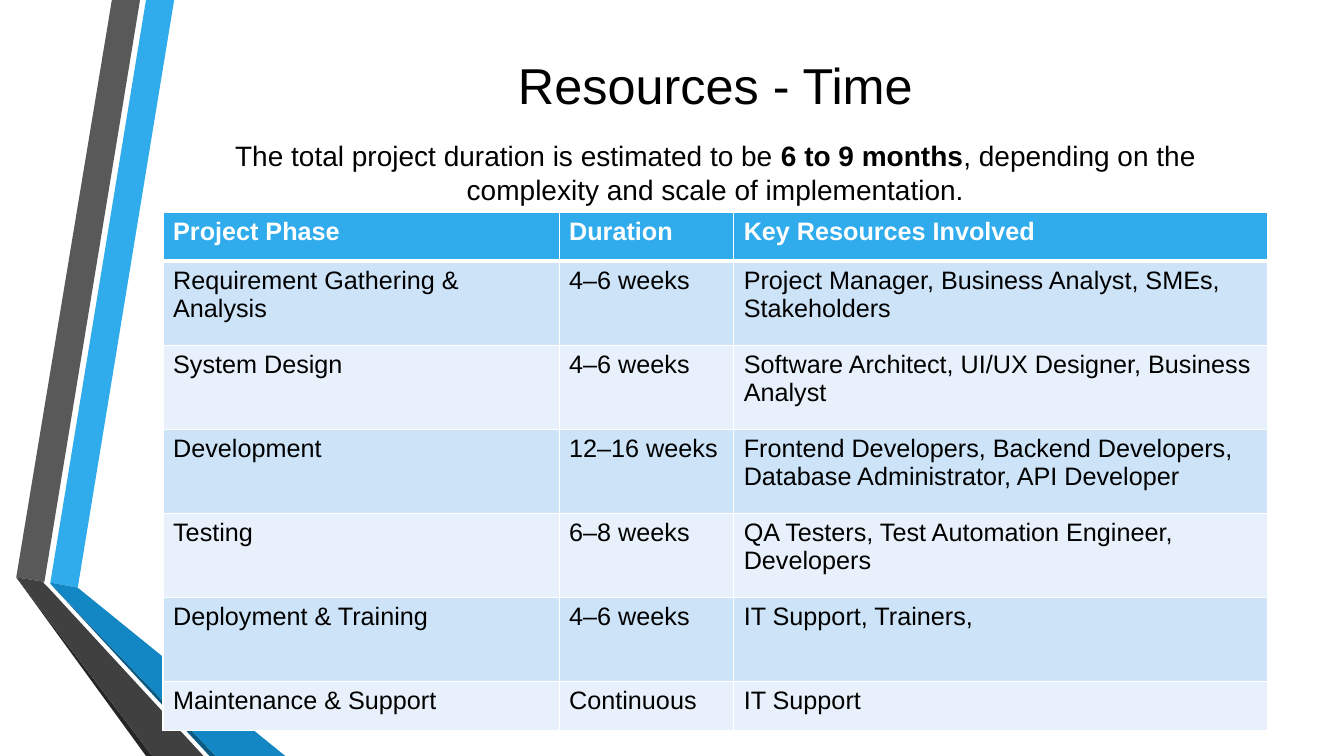
from lxml import etree
from pptx import Presentation
from pptx.dml.color import RGBColor
from pptx.enum import text
from pptx.oxml.ns import qn
from pptx.util import Cm, Pt

BLACK = RGBColor(0, 0, 0)
WHITE = RGBColor(0xFF, 0xFF, 0xFF)
BLUE = RGBColor(0x30, 0xAC, 0xEC)
MID_BLUE = RGBColor(0x12, 0x87, 0xC3)
DEEP_BLUE = RGBColor(0x0C, 0x5A, 0x82)
GREY = RGBColor(0x59, 0x59, 0x59)
DARK_GREY = RGBColor(0x40, 0x40, 0x40)
DEEP_GREY = RGBColor(0x26, 0x26, 0x26)
BAND_DARK = RGBColor(0xCD, 0xE3, 0xF8)
BAND_LIGHT = RGBColor(0xE8, 0xF1, 0xFB)

WIDTH, HEIGHT = 33.87, 19.05
LEFT, CONTENT_WIDTH = 4.11, 27.84

RIBBONS = [
    (BLUE, [(1.27, 14.68), (1.96, 14.81), (4.39, 0), (3.68, 0)]),
    (GREY, [(3.53, 0), (2.82, 0), (0.41, 14.55), (1.12, 14.66)]),
    (DEEP_GREY, [(0.41, 14.55), (3.68, HEIGHT), (3.84, HEIGHT)]),
    (DEEP_BLUE, [(1.27, 14.71), (5.28, HEIGHT), (5.44, HEIGHT)]),
    (MID_BLUE, [(1.27, 14.71), (5.44, HEIGHT), (7.19, HEIGHT),
                (1.96, 14.81), (1.27, 14.68)]),
    (DARK_GREY, [(5.13, HEIGHT), (1.22, 14.81), (1.09, 14.68), (1.12, 14.66),
                 (0.41, 14.55), (3.84, HEIGHT)]),
]

COLUMNS = [9.98, 4.4, 13.46]
ROW_HEIGHTS = [1.22] + [2.12] * 5 + [1.22]
PHASES = [
    ("Project Phase", "Duration", "Key Resources Involved"),
    ("Requirement Gathering & Analysis", "4–6 weeks",
     "Project Manager, Business Analyst, SMEs, Stakeholders"),
    ("System Design", "4–6 weeks",
     "Software Architect, UI/UX Designer, Business Analyst"),
    ("Development", "12–16 weeks",
     "Frontend Developers, Backend Developers, Database Administrator, API Developer"),
    ("Testing", "6–8 weeks", "QA Testers, Test Automation Engineer, Developers"),
    ("Deployment & Training", "4–6 weeks", "IT Support, Trainers,"),
    ("Maintenance & Support", "Continuous", "IT Support"),
]
INTRO = [
    ("The total project duration is estimated to be ", False),
    ("6 to 9 months", True),
    (", depending on the complexity and scale of implementation.", False),
]


def set_font(p, size, color, bold=False):
    p.font.name = "Arial"
    p.font.size = Pt(size)
    p.font.bold = bold
    p.font.color.rgb = color


def add_ribbons(s, left, top):
    for color, points in RIBBONS:
        corners = [(Cm(left + x), Cm(top + y)) for x, y in points]
        builder = s.shapes.build_freeform(*corners[0])
        builder.add_line_segments(corners[1:], close=True)
        sp = builder.convert_to_shape()
        sp.shadow.inherit = False
        sp.fill.solid()
        sp.fill.fore_color.rgb = color
        sp.line.fill.background()


def set_title(s, left, top, width, height):
    sp = s.shapes.title
    sp.left, sp.top, sp.width, sp.height = map(Cm, (left, top, width, height))
    tf = sp.text_frame
    tf.text = "Resources - Time"
    tf.vertical_anchor = text.MSO_ANCHOR.MIDDLE
    p = tf.paragraphs[0]
    p.alignment = text.PP_ALIGN.CENTER
    set_font(p, 36, BLACK)


def set_borders(cell, top, bottom):
    """Draw white cell borders; top and bottom are widths in points."""
    tc_pr = cell._tc.get_or_add_tcPr()
    widths = {"lnL": 1, "lnR": 1, "lnT": top, "lnB": bottom}
    for i, (tag, width) in enumerate(widths.items()):
        ln = etree.Element(qn(f"a:{tag}"), w=str(Pt(width)))
        fill = etree.SubElement(ln, qn("a:solidFill"))
        etree.SubElement(fill, qn("a:srgbClr"), val=str(WHITE))
        tc_pr.insert(i, ln)


def add_phase_table(s, left, top, width, height):
    table = s.shapes.add_table(len(PHASES), len(COLUMNS), Cm(left), Cm(top),
                               Cm(width), Cm(height)).table
    for column, column_width in zip(table.columns, COLUMNS):
        column.width = Cm(column_width)
    for i, (row, row_height, values) in enumerate(zip(table.rows, ROW_HEIGHTS, PHASES)):
        row.height = Cm(row_height)
        header = i == 0
        band = BLUE if header else BAND_DARK if i % 2 else BAND_LIGHT
        for cell, value in zip(row.cells, values):
            cell.text = value
            cell.fill.solid()
            cell.fill.fore_color.rgb = band
            set_font(cell.text_frame.paragraphs[0], 18,
                     WHITE if header else BLACK, header)
            set_borders(cell, 3 if i == 1 else 1, 3 if header else 1)


def add_intro(s, left, top, width, height):
    tf = s.shapes.add_textbox(Cm(left), Cm(top), Cm(width), Cm(height)).text_frame
    tf.word_wrap = True
    tf.vertical_anchor = text.MSO_ANCHOR.MIDDLE
    p = tf.paragraphs[0]
    p.alignment = text.PP_ALIGN.CENTER
    set_font(p, 20, BLACK)
    for words, bold in INTRO:
        r = p.add_run()
        r.text = words
        r.font.bold = bold


def main():
    prs = Presentation()
    prs.slide_width, prs.slide_height = Cm(WIDTH), Cm(HEIGHT)
    s = prs.slides.add_slide(prs.slide_layouts[5])
    add_ribbons(s, 0, 0)
    set_title(s, LEFT, 1.32, CONTENT_WIDTH, 1.6)
    add_phase_table(s, LEFT, 5.36, CONTENT_WIDTH, sum(ROW_HEIGHTS))
    add_intro(s, LEFT, 1.9, CONTENT_WIDTH, 4.88)
    prs.save("out.pptx")


if __name__ == "__main__":
    main()
